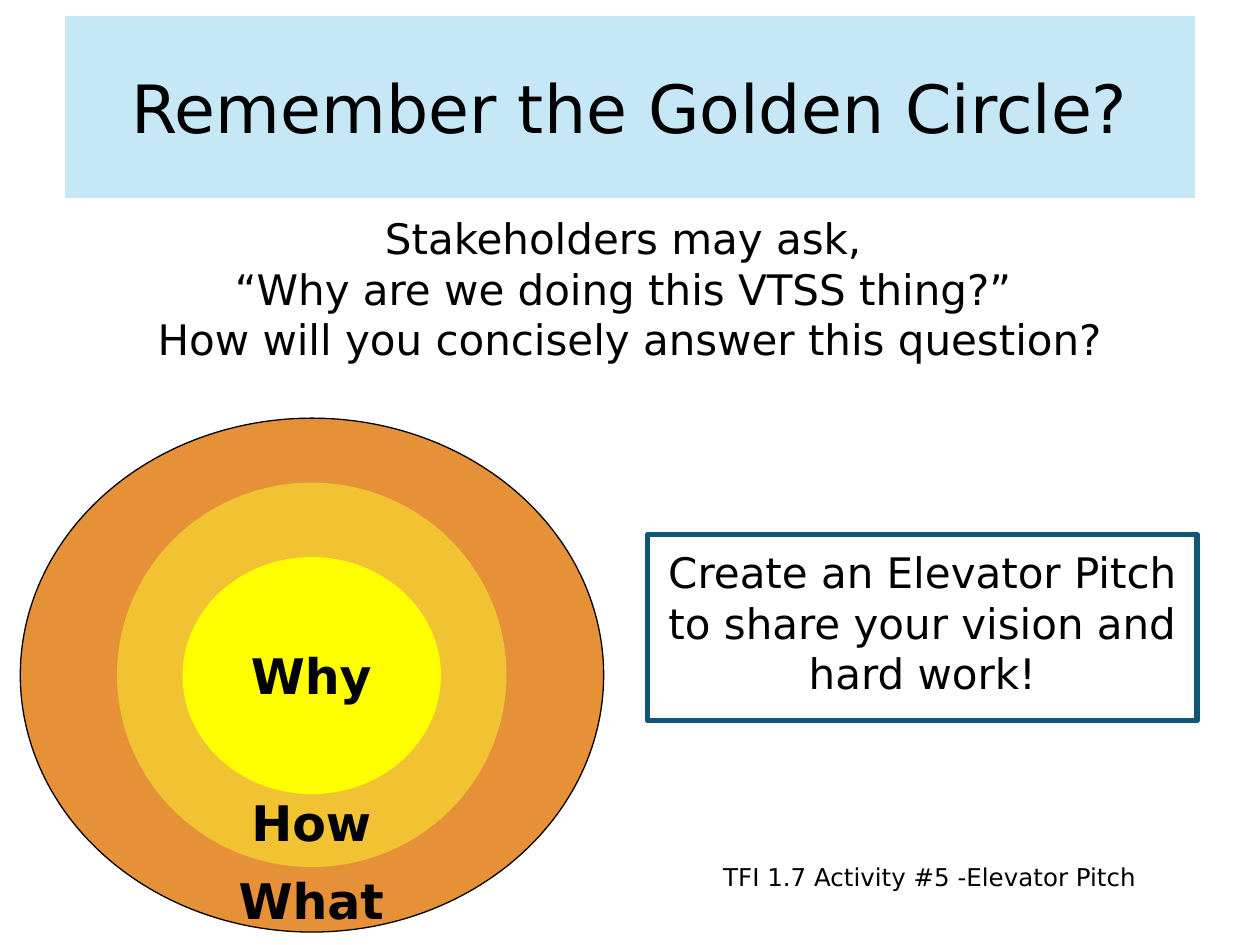
import pptx
import pptx.util
import pptx.dml.color
import pptx.enum.shapes
import pptx.enum.text
import pptx.oxml
import pptx.oxml.ns

Cm = pptx.util.Cm
Pt = pptx.util.Pt
ALIGN = pptx.enum.text.PP_ALIGN
ANCHOR = pptx.enum.text.MSO_ANCHOR
SHAPE = pptx.enum.shapes.MSO_SHAPE
FONT = "DejaVu Sans"


def colour(hex_text):
    return pptx.dml.color.RGBColor.from_string(hex_text)


def write(box, text, size=24, bold=False, align=ALIGN.CENTER,
          anchor=ANCHOR.TOP, margin=0.25):
    """Fill a shape with text, one paragraph per line."""
    frame = box.text_frame
    frame.word_wrap = True
    frame.auto_size = pptx.enum.text.MSO_AUTO_SIZE.NONE
    frame.vertical_anchor = anchor
    frame.margin_left = frame.margin_right = Cm(0.25)
    frame.margin_top = frame.margin_bottom = Cm(margin)
    for index, line in enumerate(text.split("\n")):
        para = frame.add_paragraph() if index else frame.paragraphs[0]
        para.alignment = align
        span = para.add_run()
        span.text = line
        span.font.name = FONT
        span.font.size = Pt(size)
        span.font.bold = bold
        span.font.color.rgb = colour("000000")


def paint(shape, fill=None, line=None, width=0.75):
    """Set fill and outline; None means nothing is drawn."""
    if fill:
        shape.fill.solid()
        shape.fill.fore_color.rgb = colour(fill)
    else:
        shape.fill.background()
    if line:
        shape.line.color.rgb = colour(line)
        shape.line.width = Pt(width)
    else:
        shape.line.fill.background()


def set_opacity(shape, percent):
    tag = pptx.oxml.ns.qn("a:srgbClr")
    fill = shape.fill.fore_color.rgb
    for node in shape.element.spPr.iter(tag):
        if node.get("val") == str(fill):
            alpha = pptx.oxml.parse_xml(
                '<a:alpha xmlns:a="http://schemas.openxmlformats.org/'
                f'drawingml/2006/main" val="{percent * 1000}"/>')
            node.append(alpha)


def add_shape(parent, kind, place, **style):
    shape = parent.shapes.add_shape(kind, *map(Cm, place))
    shape.shadow.inherit = False
    paint(shape, **style)
    return shape


def add_text(parent, place, text, **style):
    box = parent.shapes.add_textbox(*map(Cm, place))
    write(box, text, **style)


def format_title(page):
    title = page.shapes.title
    title.left, title.top, title.width, title.height = map(
        Cm, (1.27, 0.28, 22.86, 3.76))
    paint(title, fill="A9DCF2", line="FFFFFF", width=2.25)
    set_opacity(title, 66)
    write(title, "Remember the Golden Circle?", size=38,
          anchor=ANCHOR.MIDDLE, margin=0.13)


def add_golden_circle(page):
    group = page.shapes.add_group_shape()
    # Rings, from the outside in
    rings = [
        ((0.41, 8.43, 11.76, 10.36), "E69138", "000000"),
        ((2.36, 9.73, 7.85, 7.75), "F1C232", None),
        ((3.68, 11.23, 5.21, 4.78), "FFFF00", None),
    ]
    for place, fill, line in rings:
        add_shape(group, SHAPE.OVAL, place, fill=fill, line=line)
    # Ring labels
    for label, top in (("Why", 12.7), ("How", 15.67), ("What", 17.25)):
        add_text(group, (4.52, top, 3.51, 1.8), label, size=28, bold=True,
                 anchor=ANCHOR.MIDDLE)


def main():
    deck = pptx.Presentation()
    deck.slide_width, deck.slide_height = Cm(25.4), Cm(19.05)
    page = deck.slides.add_slide(deck.slide_layouts.get_by_name("Title Only"))

    format_title(page)
    add_golden_circle(page)

    # Question under the title
    add_text(page, (1.65, 4.04, 22.1, 3.18),
             "Stakeholders may ask, \n"
             "“Why are we doing this VTSS thing?” \n"
             "How will you concisely answer this question?")

    # Activity reference
    add_text(page, (14.33, 17.12, 11.07, 1.52),
             "TFI 1.7 Activity #5 -Elevator Pitch", size=14, align=ALIGN.LEFT)

    # Framed call to action
    pitch = add_shape(page, SHAPE.RECTANGLE, (13.06, 10.77, 11.07, 3.76),
                      line="105775", width=3)
    write(pitch, "Create an Elevator Pitch to share your vision and hard work!")

    deck.save("out.pptx")


if __name__ == "__main__":
    main()
